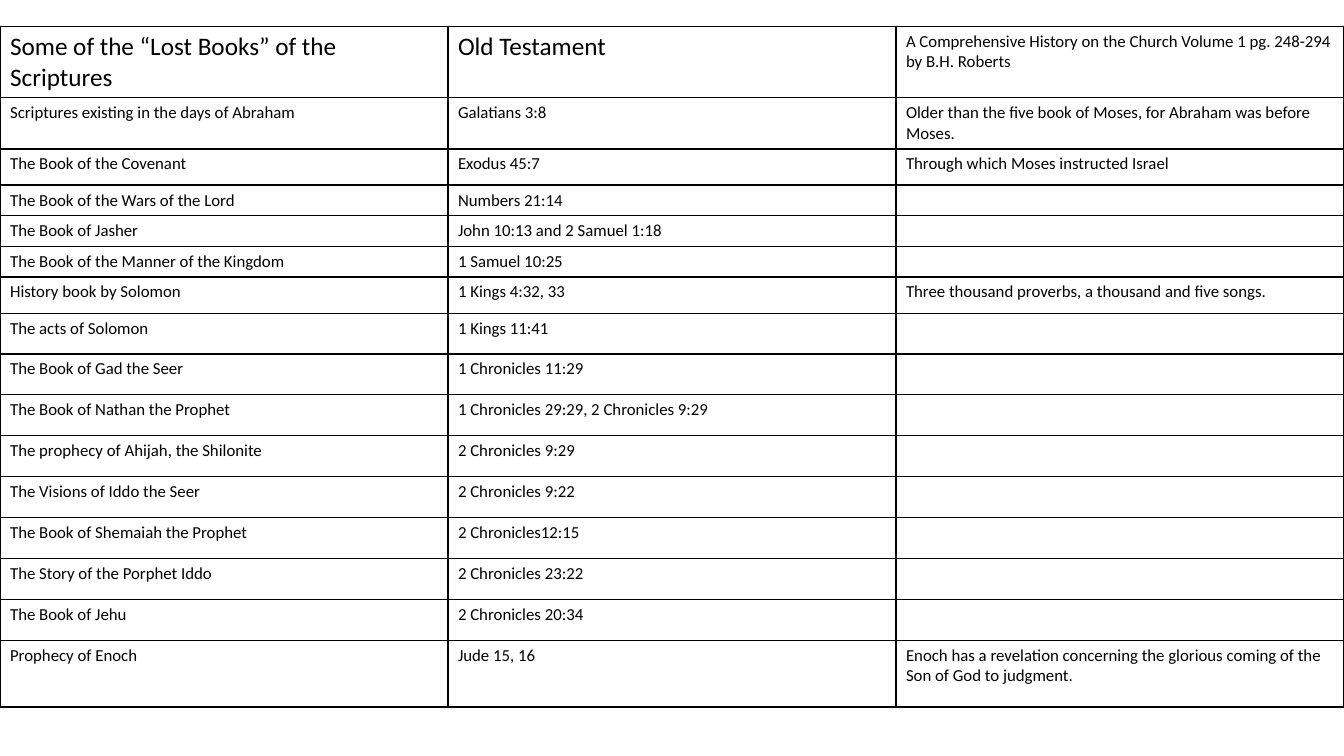
from dataclasses import dataclass
from lxml.etree import SubElement as Sub
from pptx import Presentation
from pptx.dml.color import RGBColor as Rgb
from pptx.oxml.ns import qn
from pptx.util import Pt


@dataclass
class Theme:
    """Keep the colours, font and sizes in one place."""
    ink: str = "000000"
    font: str = "Calibri"
    head: float = 18
    body: float = 12
    line: float = 1


class Page:
    """Hold the style and the current slide."""

    def __init__(self, deck, theme):
        """Add a blank slide to the deck."""
        self.theme = theme
        self.slide = deck.slides.add_slide(deck.slide_layouts[6])

    def edge(self, cell):
        """Draw a thin line on each side of a cell."""
        props = cell._tc.get_or_add_tcPr()
        for at, side in enumerate(("lnL", "lnR", "lnT", "lnB")):
            line = props.makeelement(qn(f"a:{side}"), {"w": str(Pt(self.theme.line))})
            fill = Sub(line, qn("a:solidFill"))
            Sub(fill, qn("a:srgbClr"), val=self.theme.ink)
            props.insert(at, line)

    def cell(self, cell, text, size):
        """Fill one cell with styled text."""
        cell.fill.background()
        self.edge(cell)
        cell.text_frame.text = text
        para = cell.text_frame.paragraphs[0]
        for run in para.runs:
            run.font.name = self.theme.font
            run.font.size = Pt(size)
            run.font.bold = False
            run.font.color.rgb = Rgb.from_string(self.theme.ink)
        if not text:
            Sub(para._p, qn("a:endParaRPr"), sz=str(int(size * 100)))

    def table(self, rows, tall, left, top, width):
        """Add a table with equal columns and the given row heights."""
        count = len(rows[0])
        frame = self.slide.shapes.add_table(
            len(rows), count, Pt(left), Pt(top), Pt(width), Pt(sum(tall)))
        grid = frame.table
        grid.first_row = grid.horz_banding = False
        for col in grid.columns:
            col.width = Pt(width / count)
        for i, (row, high) in enumerate(zip(rows, tall)):
            grid.rows[i].height = Pt(high)
            for j, text in enumerate(row):
                big = i == 0 and j < count - 1
                size = self.theme.head if big else self.theme.body
                self.cell(grid.cell(i, j), text, size)


BOOKS = [
    ("Some of the “Lost Books” of the Scriptures", "Old Testament",
     "A Comprehensive History on the Church Volume 1 pg. 248-294 by B.H. Roberts"),
    ("Scriptures existing in the days of Abraham", "Galatians 3:8",
     "Older than the five book of Moses, for Abraham was before Moses."),
    ("The Book of the Covenant", "Exodus 45:7", "Through which Moses instructed Israel"),
    ("The Book of the Wars of the Lord", "Numbers 21:14", ""),
    ("The Book of Jasher", "John 10:13 and 2 Samuel 1:18", ""),
    ("The Book of the Manner of the Kingdom", "1 Samuel 10:25", ""),
    ("History book by Solomon", "1 Kings 4:32, 33",
     "Three thousand proverbs, a thousand and five songs."),
    ("The acts of Solomon", "1 Kings 11:41", ""),
    ("The Book of Gad the Seer", "1 Chronicles 11:29", ""),
    ("The Book of Nathan the Prophet", "1 Chronicles 29:29, 2 Chronicles 9:29", ""),
    ("The prophecy of Ahijah, the Shilonite", "2 Chronicles 9:29", ""),
    ("The Visions of Iddo the Seer", "2 Chronicles 9:22", ""),
    ("The Book of Shemaiah the Prophet", "2 Chronicles12:15", ""),
    ("The Story of the Porphet Iddo", "2 Chronicles 23:22", ""),
    ("The Book of Jehu", "2 Chronicles 20:34", ""),
    ("Prophecy of Enoch", "Jude 15, 16",
     "Enoch has a revelation concerning the glorious coming of the Son of God to judgment."),
]
TALL = [51.2, 36.5, 25.8] + [21.9] * 3 + [25.8] + [29.2] * 8 + [47.8]


def main():
    """Build the slide and save it."""
    deck = Presentation()
    deck.slide_width, deck.slide_height = Pt(960), Pt(540)
    page = Page(deck, Theme())
    page.table(BOOKS, TALL, 0, 18.75, 960)
    deck.save("out.pptx")


if __name__ == "__main__":
    main()
